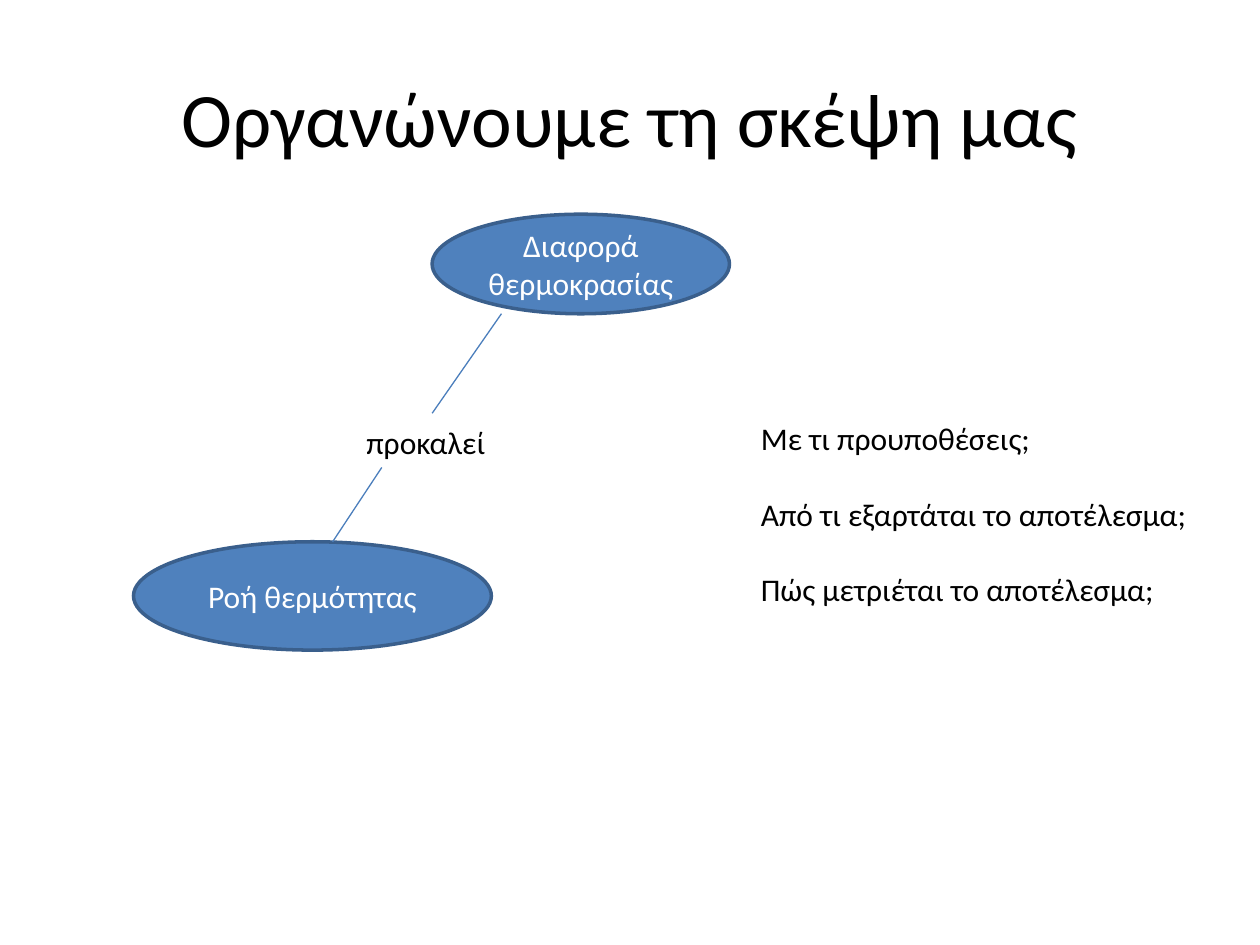
from lxml import etree
from pptx import Presentation
from pptx.dml.color import RGBColor
from pptx.enum.shapes import MSO_CONNECTOR, MSO_SHAPE
from pptx.enum.text import MSO_ANCHOR, PP_ALIGN
from pptx.oxml.ns import qn
from pptx.util import Inches, Pt


def color(hex_code):
    return RGBColor.from_string(hex_code)


def write(shape, paragraphs, size=18, ink="000000", align=PP_ALIGN.LEFT,
          anchor=MSO_ANCHOR.TOP, wrap=True, gap=0):
    """Fill a shape with paragraphs, gap points apart."""
    frame = shape.text_frame
    frame.word_wrap = wrap
    frame.vertical_anchor = anchor
    frame.text = "\n".join(paragraphs)
    for index, paragraph in enumerate(frame.paragraphs):
        paragraph.alignment = align
        paragraph.space_before = Pt(gap if index else 0)
        font = paragraph.font
        font.name, font.size = "Calibri", Pt(size)
        font.color.rgb = color(ink)


prs = Presentation()
prs.slide_width, prs.slide_height = Inches(10), Inches(7.5)
slide = prs.slides.add_slide(prs.slide_layouts[6])
shapes = slide.shapes

title = shapes.add_textbox(Inches(0.5), Inches(0.3), Inches(9), Inches(1.25))
write(title, ["Οργανώνουμε τη σκέψη μας"], size=44,
      align=PP_ALIGN.CENTER, anchor=MSO_ANCHOR.MIDDLE)

concepts = [
    ("Διαφορά θερμοκρασίας", (3.43, 1.7, 2.36, 0.79)),
    ("Ροή θερμότητας", (1.06, 4.3, 2.84, 0.86)),
]
for wording, box in concepts:
    concept = shapes.add_shape(MSO_SHAPE.OVAL, *map(Inches, box))
    concept.shadow.inherit = False
    concept.fill.solid()
    concept.fill.fore_color.rgb = color("4F81BD")
    concept.line.color.rgb = color("3A5F8C")
    concept.line.width = Pt(2)
    write(concept, [wording], ink="FFFFFF",
          align=PP_ALIGN.CENTER, anchor=MSO_ANCHOR.MIDDLE)

for ends in [(3.98, 2.49, 3.43, 3.28), (3.03, 3.71, 2.64, 4.3)]:
    link = shapes.add_connector(MSO_CONNECTOR.STRAIGHT, *map(Inches, ends))
    link.line.color.rgb = color("4B7EBC")
    link.line.width = Pt(0.75)
    etree.SubElement(link.element.spPr, qn("a:effectLst"))

link_label = shapes.add_textbox(Inches(2.81), Inches(3.31), Inches(1.16), Inches(0.4))
write(link_label, ["προκαλεί"], wrap=False)

questions = shapes.add_textbox(Inches(5.94), Inches(3.28), Inches(3.62), Inches(1.61))
write(questions, [
    "Με τι προυποθέσεις;",
    "Από τι εξαρτάται το αποτέλεσμα;",
    "Πώς μετριέται το αποτέλεσμα;",
], wrap=False, gap=21.5)

prs.save("out.pptx")
